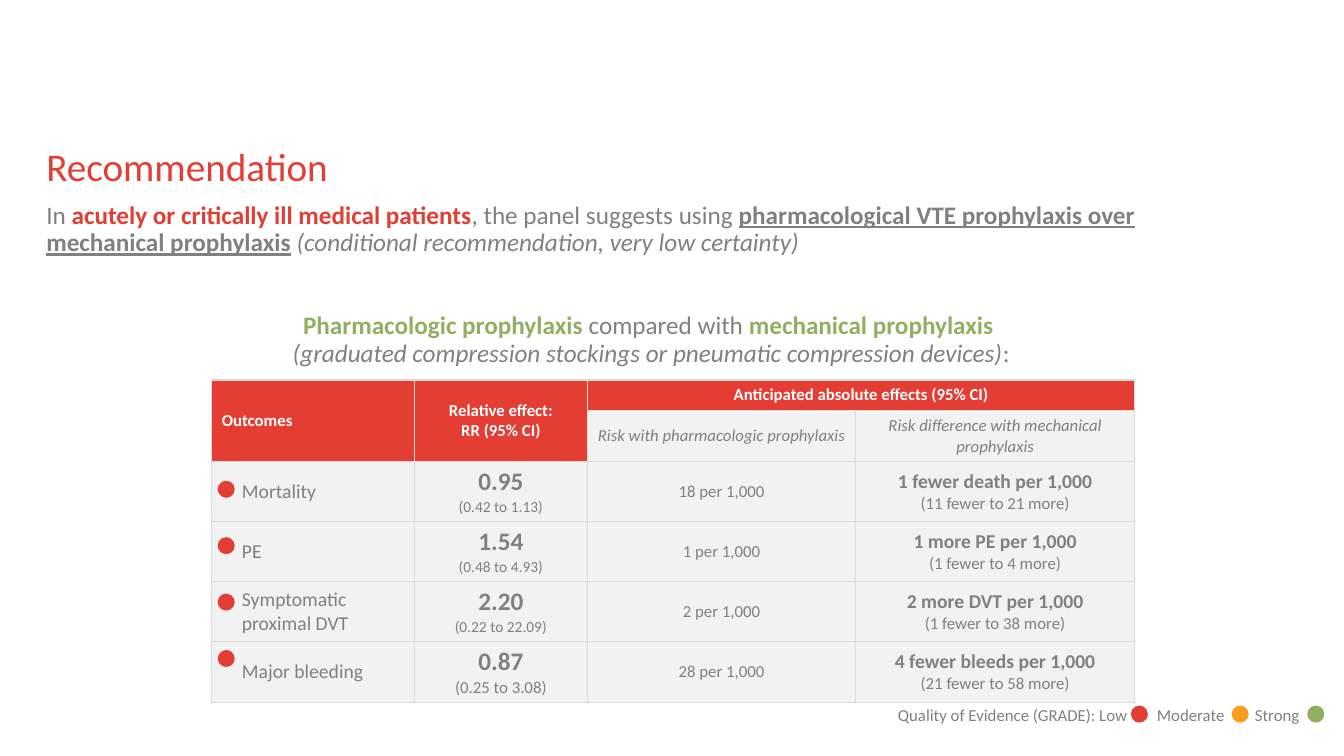
from lxml import etree
from pptx import Presentation
from pptx.dml.color import RGBColor
from pptx.enum import shapes, text
from pptx.oxml import ns
from pptx.util import Pt

RED = RGBColor(0xE4, 0x3D, 0x33)
ORANGE = RGBColor(0xF9, 0x9D, 0x1C)
GREEN = RGBColor(0x91, 0xAF, 0x61)
GRAY = RGBColor(0x80, 0x80, 0x80)
PALE = RGBColor(0xF2, 0xF2, 0xF2)
WHITE = RGBColor(0xFF, 0xFF, 0xFF)
BORDER = RGBColor(0xD9, 0xD9, 0xD9)

LEFT, CENTER = text.PP_ALIGN.LEFT, text.PP_ALIGN.CENTER
BREAK = ("\n", {})
DOT = 12.2
COLUMN_WIDTHS = [144.7, 123.8, 191.5, 199.4]
ROW_HEIGHTS = [21.6, 36.7] + [40.3] * 4

OUTCOMES = [
    # outcome, relative effect, its interval and text size, risk, difference, its interval
    ("Mortality", "0.95", "(0.42 to 1.13)", 11, "18 per 1,000",
     "1 fewer death per 1,000", "(11 fewer to 21 more)"),
    ("PE", "1.54", "(0.48 to 4.93)", 11, "1 per 1,000",
     "1 more PE per 1,000", "(1 fewer to 4 more)"),
    ("Symptomatic proximal DVT", "2.20", "(0.22 to 22.09)", 11, "2 per 1,000",
     "2 more DVT per 1,000", "(1 fewer to 38 more)"),
    ("Major bleeding", "0.87", "(0.25 to 3.08)", 12, "28 per 1,000",
     "4 fewer bleeds per 1,000", "(21 fewer to 58 more)"),
]


class Page:
    """Style of the deck and the slide being filled."""

    style = {"name": "Calibri", "size": Pt(12), "bold": False, "italic": False}

    def __init__(self, deck):
        self.page = deck.slides.add_slide(deck.slide_layouts[5])

    def put_text(self, frame, paras, align=LEFT, **layout):
        """Fill a frame with paragraphs, each a list of (words, format) spans."""
        for index, spans in enumerate(paras):
            para = frame.add_paragraph() if index else frame.paragraphs[0]
            para.alignment = align
            for name, value in layout.items():
                setattr(para, name, value)
            for words, changes in spans:
                if words == "\n":
                    para.add_line_break()
                    continue
                span = para.add_run()
                span.text = words
                look = {**self.style, **changes}
                span.font.color.rgb = look.pop("color", GRAY)
                for name, value in look.items():
                    setattr(span.font, name, value)

    def place(self, box, left, top, width, height, margin=0):
        sides = {"left": left, "top": top, "width": width, "height": height}
        for name, value in sides.items():
            setattr(box, name, Pt(value))
        frame = box.text_frame
        for side in ("left", "top", "right", "bottom"):
            setattr(frame, "margin_" + side, Pt(margin))
        frame.word_wrap = True
        frame.auto_size = text.MSO_AUTO_SIZE.NONE
        frame.vertical_anchor = text.MSO_ANCHOR.TOP
        return frame

    def title(self, words, *place):
        frame = self.place(self.page.shapes.title, *place)
        self.put_text(frame, [[(words, {"size": Pt(28), "color": RED})]], line_spacing=0.9)

    def box(self, *place, margin=0):
        box = self.page.shapes.add_textbox(0, 0, 0, 0)
        return self.place(box, *place, margin=margin)

    def dot(self, left, top, color):
        dot = self.page.shapes.add_shape(
            shapes.MSO_SHAPE.OVAL, Pt(left), Pt(top), Pt(DOT), Pt(DOT))
        dot.shadow.inherit = False
        dot.fill.solid()
        dot.fill.fore_color.rgb = color
        dot.line.fill.background()

    def table(self, left, top):
        frame = self.page.shapes.add_table(
            len(ROW_HEIGHTS), len(COLUMN_WIDTHS), Pt(left), Pt(top),
            Pt(sum(COLUMN_WIDTHS)), Pt(sum(ROW_HEIGHTS)))
        table = frame.table
        table.first_row = table.horz_banding = False
        for column, width in zip(table.columns, COLUMN_WIDTHS):
            column.width = Pt(width)
        for row, height in zip(table.rows, ROW_HEIGHTS):
            row.height = Pt(height)
        for cell in table.iter_cells():
            self.outline(cell)
            cell.fill.solid()
            cell.fill.fore_color.rgb = PALE
            cell.vertical_anchor = text.MSO_ANCHOR.MIDDLE
        return table

    def outline(self, cell):
        properties = cell._tc.get_or_add_tcPr()
        for side in ("lnL", "lnR", "lnT", "lnB"):
            line = etree.SubElement(properties, ns.qn("a:" + side), w=str(Pt(1)))
            fill = etree.SubElement(line, ns.qn("a:solidFill"))
            etree.SubElement(fill, ns.qn("a:srgbClr"), val=str(BORDER))

    def head(self, cell, lines, align=CENTER):
        cell.fill.fore_color.rgb = RED
        look = {"bold": True, "color": WHITE}
        self.put_text(cell.text_frame, [[(line, look)] for line in lines], align)


def add_tabs(para, stops):
    tabs = etree.SubElement(para._p.get_or_add_pPr(), ns.qn("a:tabLst"))
    for stop in stops:
        etree.SubElement(tabs, ns.qn("a:tab"), pos=str(Pt(stop)), algn="l")


def add_recommendation(page):
    plain = {"size": Pt(18)}
    strong = {**plain, "bold": True}
    slanted = {**plain, "italic": True}
    green = {**strong, "color": GREEN}
    frame = page.box(33.1, 144.7, 864, 311)
    page.put_text(frame, [[
        ("In ", plain),
        ("acutely or critically ill medical patients", {**strong, "color": RED}),
        (", the panel suggests using ", plain),
        ("pharmacological VTE prophylaxis over mechanical prophylaxis",
         {**strong, "underline": True}),
        (" ", plain),
        ("(conditional recommendation, very low certainty)", slanted),
    ], [
        ("Pharmacologic prophylaxis ", green),
        ("compared with ", plain),
        ("mechanical prophylaxis ", green),
        BREAK,
        ("(graduated compression stockings or pneumatic compression devices)", slanted),
        (":", plain),
    ]], line_spacing=0.9)
    comparison = frame.paragraphs[1]
    comparison.alignment = CENTER
    comparison.space_before = Pt(40)


def add_outcomes(page):
    table = page.table(151.2, 271.4)
    for column in (0, 1):
        table.cell(0, column).merge(table.cell(1, column))
    table.cell(0, 2).merge(table.cell(0, 3))
    page.head(table.cell(0, 0), ["Outcomes"], LEFT)
    page.head(table.cell(0, 1), ["Relative effect:", "RR (95% CI)"])
    page.head(table.cell(0, 2), ["Anticipated absolute effects (95% CI)"])
    for column, words in ((2, "Risk with pharmacologic prophylaxis"),
                          (3, "Risk difference with mechanical prophylaxis")):
        page.put_text(table.cell(1, column).text_frame, [[(words, {"italic": True})]], CENTER)

    for index, outcome in enumerate(OUTCOMES):
        name, effect, interval, size, risk, difference, spread = outcome
        label, *values = [table.cell(index + 2, column) for column in range(4)]
        label.margin_left = Pt(21.6)
        page.put_text(label.text_frame, [[(name, {"size": Pt(14)})]])
        contents = [
            [[(effect, {"size": Pt(18), "bold": True})], [(interval, {"size": Pt(size)})]],
            [[(risk, {})]],
            [[(difference, {"size": Pt(14), "bold": True})], [(spread, {})]],
        ]
        for cell, paras in zip(values, contents):
            page.put_text(cell.text_frame, paras, CENTER)
        page.dot(155.5, 343.4 + 40.3 * index, RED)


def add_legend(page):
    frame = page.box(634.3, 499.7, 325.7, 21.6, margin=3.6)
    frame.margin_left = Pt(7.2)
    add_tabs(frame.paragraphs[0], [185, 255])
    page.put_text(frame, [[("Quality of Evidence (GRADE): Low\tModerate\tStrong", {})]])
    for left, color in ((807.8, RED), (879.8, ORANGE), (933.8, GREEN)):
        page.dot(left, 504, color)


def main():
    deck = Presentation()
    deck.slide_width, deck.slide_height = Pt(960), Pt(540)
    page = Page(deck)
    page.title("Recommendation", 33.1, 105.8, 864, 33.1)
    add_recommendation(page)
    add_outcomes(page)
    add_legend(page)
    deck.save("out.pptx")


if __name__ == "__main__":
    main()
